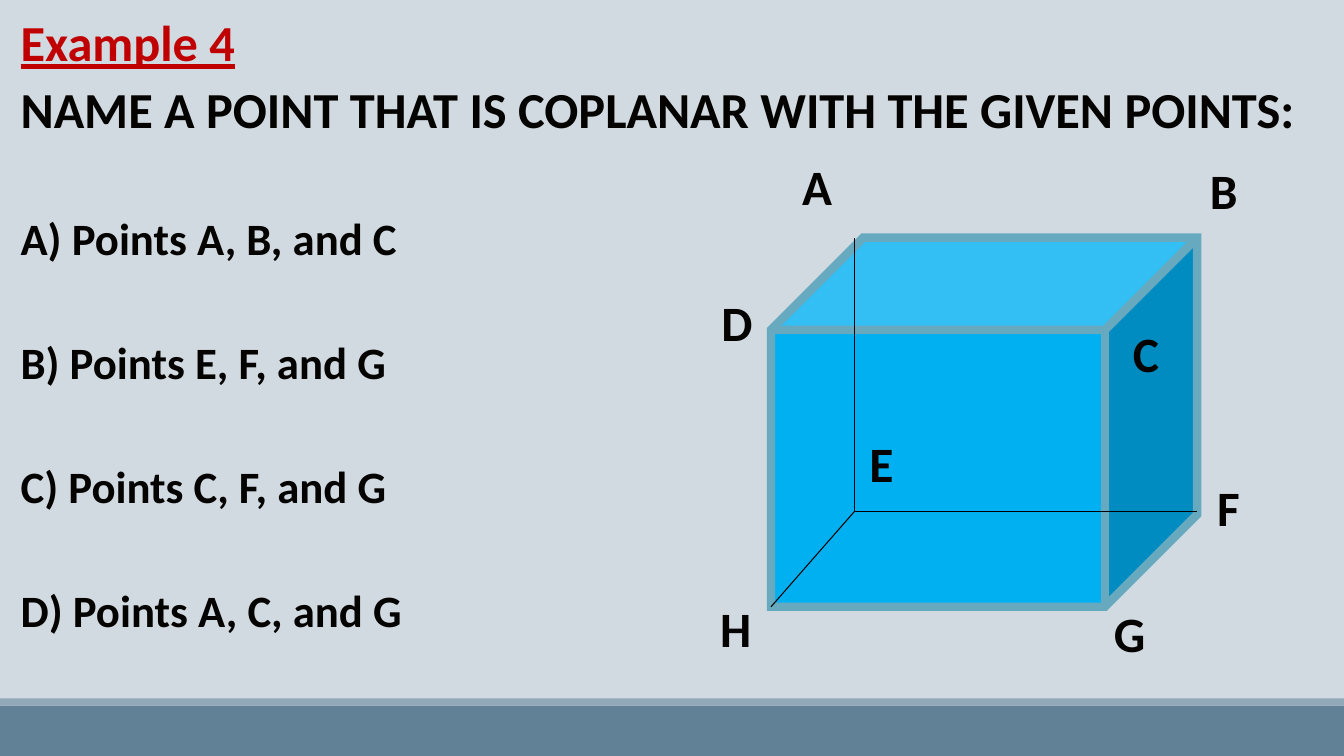
import dataclasses

import lxml.etree
import pptx
import pptx.dml.color
import pptx.enum.shapes
import pptx.enum.text
import pptx.oxml.ns
import pptx.util

Cm = pptx.util.Cm
Pt = pptx.util.Pt
Align = pptx.enum.text.PP_ALIGN
ShapeType = pptx.enum.shapes.MSO_SHAPE

INK = "040300"
SLIDE_WIDTH, SLIDE_HEIGHT = 33.87, 19.05
TEXT_LEFT, TEXT_WIDTH, LINE_BOX_HEIGHT = 0.52, 33.1, 1.5
LABEL_SIZE = 1.6
CUBE_LEFT, CUBE_TOP, CUBE_RIGHT, CUBE_BOTTOM = 19.43, 5.99, 30.17, 15.29
HIDDEN_CORNER = (21.54, 12.88)


@dataclasses.dataclass(frozen=True)
class Block:
    left: float
    top: float
    width: float
    height: float
    fill: str
    kind: int = ShapeType.RECTANGLE
    line: str = ""
    line_width: float = 0


@dataclasses.dataclass(frozen=True)
class Vertex:
    name: str
    x: float
    y: float


BANDS = [
    Block(0, 17.78, SLIDE_WIDTH, 1.27, "618197"),
    Block(0, 17.6, SLIDE_WIDTH, 0.18, "92A9B9"),
]
CUBE = Block(CUBE_LEFT, CUBE_TOP, CUBE_RIGHT - CUBE_LEFT, CUBE_BOTTOM - CUBE_TOP,
             "00B0F0", ShapeType.CUBE, "67AABF", 6)
HIDDEN_EDGE_ENDS = [
    (HIDDEN_CORNER[0], CUBE_TOP),
    (CUBE_LEFT, CUBE_BOTTOM),
    (CUBE_RIGHT, HIDDEN_CORNER[1]),
]
VERTICES = [
    Vertex("A", 20.59, 4.69),
    Vertex("B", 30.84, 4.79),
    Vertex("C", 28.88, 8.88),
    Vertex("D", 18.57, 8.12),
    Vertex("E", 22.21, 11.67),
    Vertex("F", 30.96, 12.76),
    Vertex("G", 28.47, 15.94),
    Vertex("H", 18.54, 15.81),
]
CHOICES = [
    "A) Points A, B, and C",
    "B) Points E, F, and G",
    "C) Points C, F, and G",
    "D) Points A, C, and G",
]


def color(value: str) -> pptx.dml.color.RGBColor:
    return pptx.dml.color.RGBColor.from_string(value)


def write(shape, lines: list[str], *, size: float, ink: str = INK, align=Align.LEFT,
          underline: bool = False, space_after: float = 0,
          anchor=pptx.enum.text.MSO_ANCHOR.MIDDLE) -> None:
    frame = shape.text_frame
    frame.text = "\n".join(lines)
    frame.word_wrap = True
    frame.auto_size = pptx.enum.text.MSO_AUTO_SIZE.NONE
    frame.vertical_anchor = anchor
    frame.margin_left = frame.margin_right = frame.margin_top = frame.margin_bottom = 0
    for paragraph in frame.paragraphs:
        paragraph.alignment = align
        paragraph.space_before = Pt(0)
        paragraph.space_after = Pt(space_after)
        for run in paragraph.runs:
            run.font.name = "Calibri"
            run.font.size = Pt(size)
            run.font.bold = True
            run.font.underline = underline
            run.font.color.rgb = color(ink)


def add_text(slide, left: float, top: float, width: float, height: float,
             lines: list[str], **text_format) -> None:
    box = slide.shapes.add_textbox(Cm(left), Cm(top), Cm(width), Cm(height))
    write(box, lines, **text_format)


def add_block(slide, block: Block) -> None:
    shape = slide.shapes.add_shape(block.kind, Cm(block.left), Cm(block.top),
                                   Cm(block.width), Cm(block.height))
    shape.shadow.inherit = False
    shape.fill.solid()
    shape.fill.fore_color.rgb = color(block.fill)
    if not block.line:
        shape.line.fill.background()
        return
    shape.line.color.rgb = color(block.line)
    shape.line.width = Pt(block.line_width)
    outline = shape.element.spPr.find(pptx.oxml.ns.qn("a:ln"))
    lxml.etree.SubElement(outline, pptx.oxml.ns.qn("a:miter"), lim="800000")


def add_hidden_edge(slide, end: tuple[float, float]) -> None:
    edge = slide.shapes.add_connector(
        pptx.enum.shapes.MSO_CONNECTOR.STRAIGHT,
        *(Cm(value) for value in HIDDEN_CORNER + end))
    edge.line.color.rgb = color("000000")
    edge.line.width = Pt(0.75)
    lxml.etree.SubElement(edge.element.spPr, pptx.oxml.ns.qn("a:effectLst"))


def main() -> None:
    presentation = pptx.Presentation()
    presentation.slide_width = Cm(SLIDE_WIDTH)
    presentation.slide_height = Cm(SLIDE_HEIGHT)
    slide = presentation.slides.add_slide(presentation.slide_layouts[5])
    slide.background.fill.solid()
    slide.background.fill.fore_color.rgb = color("D1D9E1")

    title = slide.shapes.title
    title.left, title.top = Cm(TEXT_LEFT), Cm(0.29)
    title.width, title.height = Cm(TEXT_WIDTH), Cm(LINE_BOX_HEIGHT)
    write(title, ["Example 4"], size=36, ink="C00000", underline=True)

    add_text(slide, TEXT_LEFT, 1.99, TEXT_WIDTH, LINE_BOX_HEIGHT,
             ["NAME A POINT THAT IS COPLANAR WITH THE GIVEN POINTS:"], size=36)
    add_text(slide, TEXT_LEFT, 5.31, 16, 11.4, CHOICES, size=32, space_after=50.2,
             anchor=pptx.enum.text.MSO_ANCHOR.TOP)

    for block in [*BANDS, CUBE]:
        add_block(slide, block)
    for end in HIDDEN_EDGE_ENDS:
        add_hidden_edge(slide, end)
    for vertex in VERTICES:
        add_text(slide, vertex.x - LABEL_SIZE / 2, vertex.y - LABEL_SIZE / 2,
                 LABEL_SIZE, LABEL_SIZE, [vertex.name], size=35.3, align=Align.CENTER)

    presentation.save("out.pptx")


if __name__ == "__main__":
    main()
